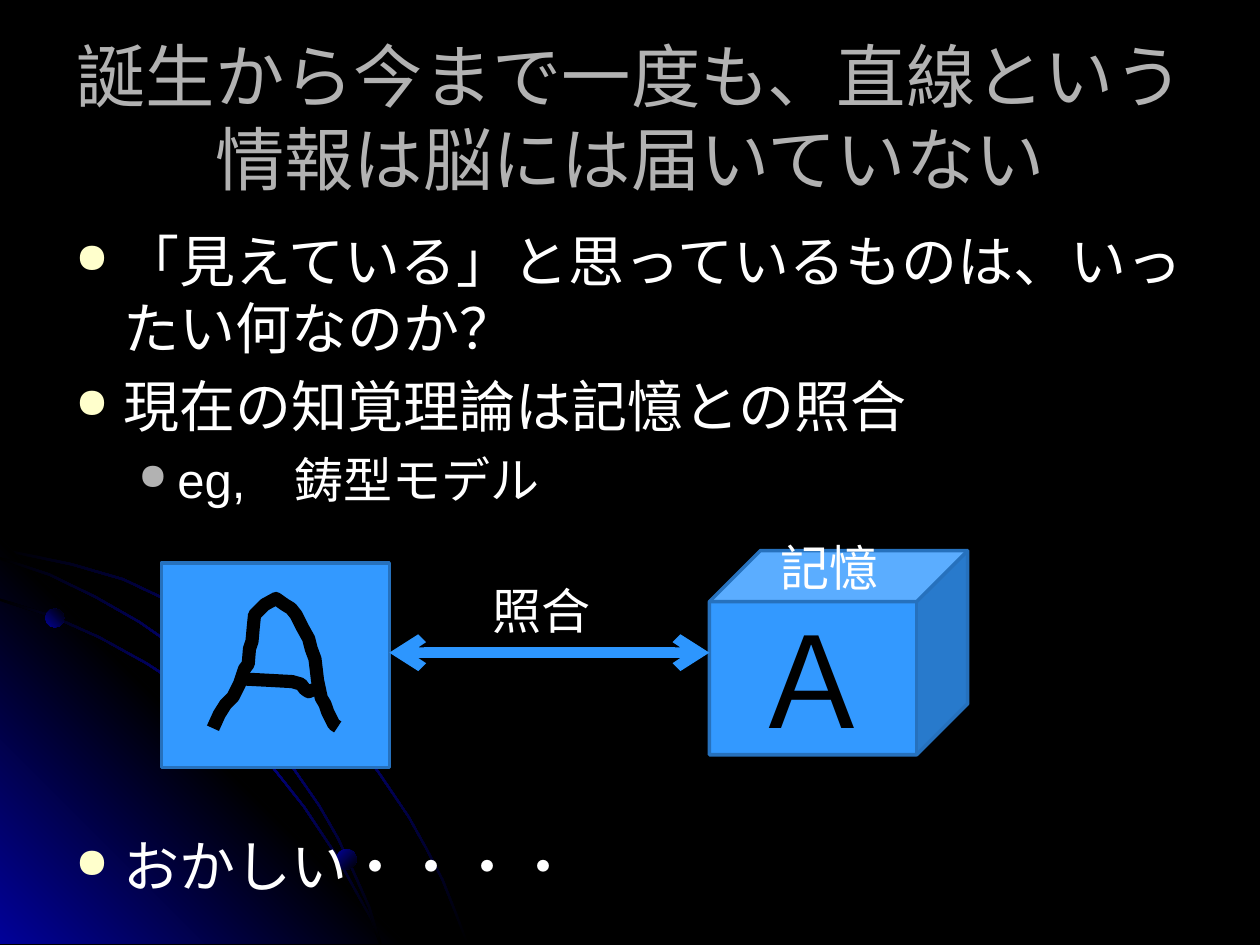
from dataclasses import dataclass
from typing import NamedTuple

from lxml.etree import SubElement
from pptx import Presentation
from pptx.dml.color import RGBColor
from pptx.enum.shapes import MSO_CONNECTOR, MSO_SHAPE
from pptx.enum.text import MSO_ANCHOR, PP_ALIGN
from pptx.oxml.ns import qn
from pptx.util import Inches, Pt


@dataclass(frozen=True)
class Theme:
    font: str = "Arial"
    black: str = "000000"
    white: str = "FFFFFF"
    glow: str = "010199"
    heading: str = "B2B2B2"
    bullet: str = "FFFFCC"
    panel: str = "3399FF"
    panel_edge: str = "2671BD"
    arrow: str = "2D96FE"
    title_size: float = 39.6
    body_size: float = 32
    label_size: float = 28
    letter_size: float = 72


THEME = Theme()


class Box(NamedTuple):
    left: float
    top: float
    width: float
    height: float

    def emu(self) -> list:
        return [Inches(value) for value in self]


class Bullet(NamedTuple):
    text: str
    size: float
    color: str
    margin: float
    hanging: float
    before: float
    level: int = 0


class Label(NamedTuple):
    text: str
    box: Box


class Orb(NamedTuple):
    box: Box
    angle: int


STREAK_WIDTH = 0.02
STREAKS = [
    [(0, 4.35), (0.57, 4.47), (0.98, 4.59), (1.36, 4.77), (1.74, 4.97), (2.09, 5.21),
     (2.42, 5.48), (2.72, 5.78), (3, 6.11), (3.25, 6.48), (3.39, 6.73), (3.52, 6.98),
     (3.62, 7.23), (3.72, 7.49)],
    [(0, 4.75), (0.41, 4.88), (0.79, 5.05), (1.17, 5.26), (1.52, 5.49), (1.84, 5.76),
     (2.15, 6.06), (2.42, 6.4), (2.66, 6.76), (2.86, 7.12), (2.96, 7.3), (3.03, 7.49)],
    [(0, 4.42), (0.39, 4.55), (0.76, 4.73), (1.11, 4.93), (1.44, 5.16), (1.75, 5.43),
     (2.04, 5.73), (2.29, 6.03), (2.54, 6.39), (2.69, 6.65), (2.82, 6.93), (2.94, 7.2),
     (3.03, 7.49)],
]
CORNER = [(3.22, 7.49), (0, 7.49), (0, 4.27)]
ORBS = [Orb(Box(0.36, 4.83, 0.15, 0.15), 315), Orb(Box(2.67, 6.74, 0.16, 0.16), 45)]
HANDWRITTEN_A = [
    [(1.69, 5.78), (1.74, 5.67), (1.79, 5.59), (1.85, 5.53), (1.9, 5.43), (1.94, 5.31),
     (1.97, 5.27), (1.98, 5.15), (2, 5.09), (2.01, 4.98), (2.02, 4.88), (2.1, 4.8),
     (2.19, 4.75), (2.26, 4.8), (2.31, 4.83), (2.35, 4.88), (2.4, 4.98), (2.45, 5.07),
     (2.47, 5.15), (2.5, 5.23), (2.52, 5.4), (2.55, 5.54), (2.58, 5.59), (2.6, 5.65),
     (2.65, 5.75), (2.68, 5.77)],
    [(1.95, 5.39), (2.14, 5.4), (2.32, 5.41), (2.39, 5.43), (2.42, 5.47), (2.45, 5.49),
     (2.5, 5.47), (2.55, 5.46)],
]
BULLETS = [
    Bullet("「見えている」と思っているものは、いったい何なのか？",
           THEME.body_size, THEME.bullet, 0.38, 0.38, 6),
    Bullet("現在の知覚理論は記憶との照合", THEME.body_size, THEME.bullet, 0.38, 0.38, 6),
    Bullet("eg,　鋳型モデル", THEME.label_size, THEME.heading, 0.81, 0.31, 6, 1),
    Bullet("おかしい・・・・", THEME.body_size, THEME.bullet, 0.38, 0.38, 185),
]
LABELS = [
    Label("記憶", Box(6.1, 4.22, 1.1, 0.57)),
    Label("照合", Box(3.81, 4.56, 1.1, 0.57)),
]


def rgb(color: str) -> RGBColor:
    return RGBColor.from_string(color)


def set_font(paragraph, size: float, color: str) -> None:
    paragraph.font.name = THEME.font
    paragraph.font.size = Pt(size)
    paragraph.font.color.rgb = rgb(color)


def set_gradient(shape, colors: list[str], angle: int) -> None:
    shape.shadow.inherit = False
    shape.line.fill.background()
    shape.fill.gradient()
    shape.fill.gradient_angle = (360 - angle) % 360
    stops = shape._element.spPr.find(qn("a:gradFill")).find(qn("a:gsLst"))
    for stop in list(stops):
        stops.remove(stop)
    for index, color in enumerate(colors):
        position = 100000 * index // (len(colors) - 1)
        stop = SubElement(stops, qn("a:gs"), pos=str(position))
        SubElement(stop, qn("a:srgbClr"), val=color)


def draw_path(slide, points: list, closed: bool):
    vertices = [(Inches(x), Inches(y)) for x, y in points]
    builder = slide.shapes.build_freeform(*vertices[0], scale=1.0)
    builder.add_line_segments(vertices[1:], close=closed)
    return builder.convert_to_shape()


def draw_streak(slide, edge: list) -> None:
    last = len(edge) - 1
    inner = [(x - STREAK_WIDTH * i / last, y + STREAK_WIDTH * (1 - i / last))
             for i, (x, y) in enumerate(edge)]
    streak = draw_path(slide, edge + inner[::-1], True)
    set_gradient(streak, [THEME.black, THEME.glow, THEME.black], 45)


def draw_backdrop(slide) -> None:
    slide.background.fill.solid()
    slide.background.fill.fore_color.rgb = rgb(THEME.black)
    draw_streak(slide, STREAKS[0])
    corner = draw_path(slide, CORNER, True)
    set_gradient(corner, [THEME.glow, THEME.black, THEME.glow], 315)
    for edge in STREAKS[1:]:
        draw_streak(slide, edge)
    for box, angle in ORBS:
        orb = slide.shapes.add_shape(MSO_SHAPE.OVAL, *box.emu())
        set_gradient(orb, [THEME.glow, THEME.black], angle)


def draw_title(slide, text: str, box: Box) -> None:
    title = slide.shapes.title
    title.left, title.top, title.width, title.height = box.emu()
    title.text_frame.vertical_anchor = MSO_ANCHOR.MIDDLE
    heading = title.text_frame.paragraphs[0]
    heading.text = text
    heading.alignment = PP_ALIGN.CENTER
    set_font(heading, THEME.title_size, THEME.heading)


def draw_bullets(slide, bullets: list[Bullet], box: Box) -> None:
    frame = slide.shapes.add_textbox(*box.emu()).text_frame
    frame.word_wrap = True
    for index, bullet in enumerate(bullets):
        paragraph = frame.add_paragraph() if index else frame.paragraphs[0]
        paragraph.text = bullet.text
        paragraph.level = bullet.level
        paragraph.space_before = Pt(bullet.before)
        properties = paragraph._p.get_or_add_pPr()
        properties.set("marL", str(Inches(bullet.margin)))
        properties.set("indent", str(-Inches(bullet.hanging)))
        color = SubElement(properties, qn("a:buClr"))
        SubElement(color, qn("a:srgbClr"), val=bullet.color)
        SubElement(properties, qn("a:buSzPct"), val="75000")
        SubElement(properties, qn("a:buChar"), char="●")
        set_font(paragraph, bullet.size, THEME.white)


def draw_panel(slide, kind: MSO_SHAPE, box: Box):
    panel = slide.shapes.add_shape(kind, *box.emu())
    panel.shadow.inherit = False
    panel.fill.solid()
    panel.fill.fore_color.rgb = rgb(THEME.panel)
    panel.line.color.rgb = rgb(THEME.panel_edge)
    panel.line.width = Pt(2)
    return panel


def draw_memory_cube(slide) -> None:
    cube = draw_panel(slide, MSO_SHAPE.CUBE, Box(5.63, 4.37, 2.05, 1.62))
    cube.text_frame.vertical_anchor = MSO_ANCHOR.MIDDLE
    letter = cube.text_frame.paragraphs[0]
    letter.text = "Ａ"
    letter.alignment = PP_ALIGN.CENTER
    set_font(letter, THEME.letter_size, THEME.black)


def draw_handwriting(slide) -> None:
    draw_panel(slide, MSO_SHAPE.RECTANGLE, Box(1.28, 4.47, 1.81, 1.62))
    for points in HANDWRITTEN_A:
        stroke = draw_path(slide, points, False)
        stroke.shadow.inherit = False
        stroke.fill.background()
        stroke.line.color.rgb = rgb(THEME.black)
        stroke.line.width = Pt(7.5)


def draw_match_arrow(slide, left: float, right: float, y: float) -> None:
    arrow = slide.shapes.add_connector(
        MSO_CONNECTOR.STRAIGHT, Inches(left), Inches(y), Inches(right), Inches(y))
    arrow.line.color.rgb = rgb(THEME.arrow)
    arrow.line.width = Pt(6)
    for end in ("a:headEnd", "a:tailEnd"):
        SubElement(arrow.line._get_or_add_ln(), qn(end), type="arrow")
    SubElement(arrow._element.spPr, qn("a:effectLst"))


def draw_label(slide, label: Label) -> None:
    frame = slide.shapes.add_textbox(*label.box.emu()).text_frame
    frame.word_wrap = True
    frame.paragraphs[0].text = label.text
    set_font(frame.paragraphs[0], THEME.label_size, THEME.white)


def main() -> None:
    deck = Presentation()
    deck.slide_width, deck.slide_height = Inches(10), Inches(7.5)
    slide = deck.slides.add_slide(deck.slide_layouts[5])
    draw_backdrop(slide)
    draw_title(slide, "誕生から今まで一度も、直線という\v情報は脳には届いていない", Box(0.5, 0.3, 9, 1.25))
    draw_bullets(slide, BULLETS, Box(0.5, 1.75, 9, 4.95))
    draw_memory_cube(slide)
    draw_handwriting(slide)
    draw_match_arrow(slide, 3.09, 5.63, 5.18)
    for label in LABELS:
        draw_label(slide, label)
    deck.save("out.pptx")


if __name__ == "__main__":
    main()
